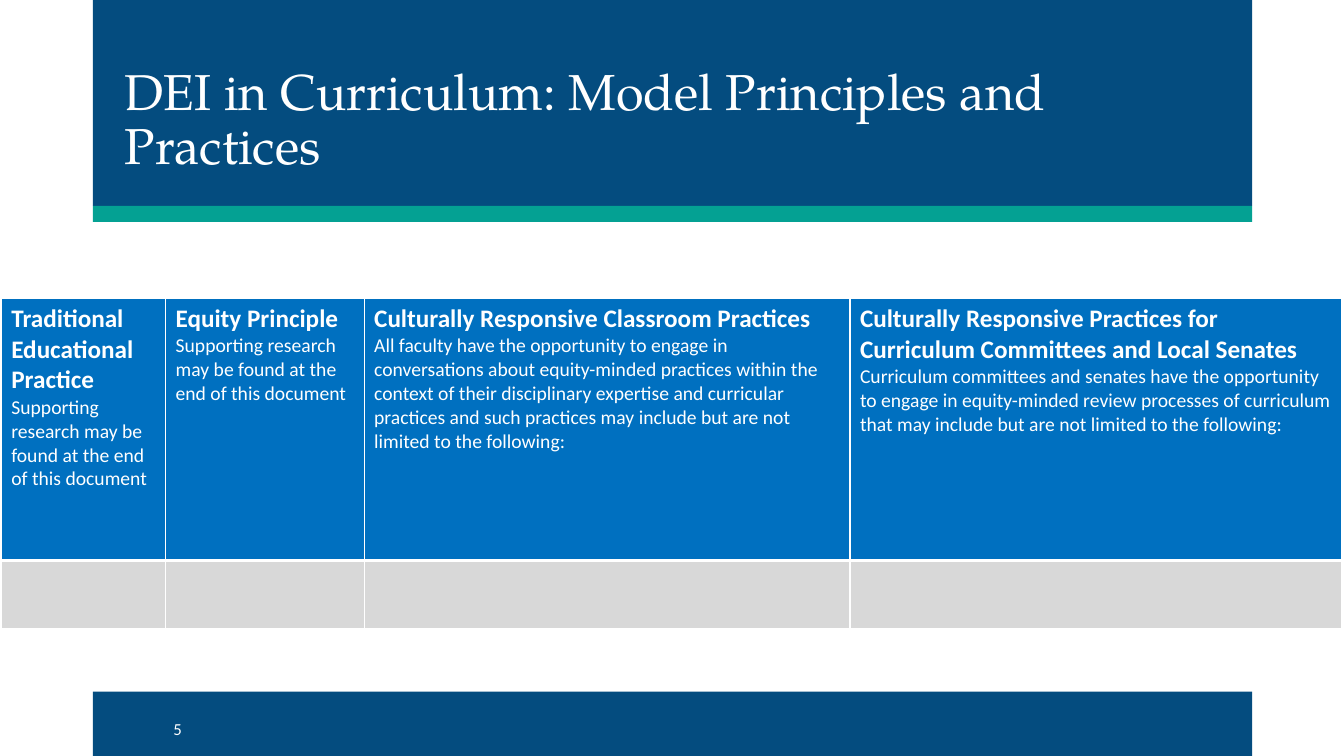
from lxml.etree import SubElement as Sub
from pptx import Presentation
from pptx.dml.color import RGBColor
from pptx.enum.shapes import MSO_SHAPE as Shape
from pptx.enum.text import MSO_ANCHOR as Anchor, MSO_AUTO_SIZE as Fit, PP_ALIGN as Align
from pptx.oxml.ns import qn
from pptx.util import Pt

NAVY = RGBColor(0x04, 0x4C, 0x7F)
TEAL = RGBColor(0x04, 0xA1, 0x93)
BLUE = RGBColor(0x00, 0x70, 0xC0)
GRAY = RGBColor(0xD8, 0xD8, 0xD8)
WHITE = RGBColor(0xFF, 0xFF, 0xFF)
SANS = "Calibri"
SERIF = "TeX Gyre Pagella"

SOURCE = "Supporting research may be found at the end of this document"
HEADS = [
    (117.36, "Traditional Educational Practice", SOURCE),
    (141.84, "Equity Principle", SOURCE),
    (347.04, "Culturally Responsive Classroom Practices",
     "All faculty have the opportunity to engage in conversations about "
     "equity-minded practices within the context of their disciplinary "
     "expertise and curricular practices and such practices may include "
     "but are not limited to the following:"),
    (351.36, "Culturally Responsive Practices for Curriculum Committees and Local Senates",
     "Curriculum committees and senates have the opportunity to engage in "
     "equity-minded review processes of curriculum that may include but "
     "are not limited to the following:"),
]
ROWS = [187.2, 48.96]


def write(para, text, size, font=SANS, bold=False, space=None):
    para.alignment = Align.LEFT
    if space:
        para.line_spacing = space
    run = para.add_run()
    run.text = text
    run.font.size = Pt(size)
    run.font.name = font
    run.font.bold = bold
    run.font.color.rgb = WHITE


def band(slide, left, top, width, height, color):
    bar = slide.shapes.add_shape(Shape.RECTANGLE, Pt(left), Pt(top), Pt(width), Pt(height))
    bar.shadow.inherit = False
    bar.fill.solid()
    bar.fill.fore_color.rgb = color
    bar.line.fill.background()


def header(slide, left, top, width, height):
    strip = 11.5
    band(slide, left, top, width, height - strip, NAVY)
    band(slide, left, top + height - strip, width, strip, TEAL)
    title = slide.shapes.title
    title.left, title.top = Pt(left + 15.6), Pt(top + 34.6)
    title.width, title.height = Pt(796.3), Pt(103.7)
    frame = title.text_frame
    frame.word_wrap = True
    frame.auto_size = Fit.NONE
    frame.vertical_anchor = Anchor.MIDDLE
    write(frame.paragraphs[0], "DEI in Curriculum: Model Principles and Practices",
          36, font=SERIF, space=0.9)
    slide.shapes._spTree.append(title._element)


def footer(slide, left, top, width, height):
    band(slide, left, top, width, height, NAVY)
    box = slide.shapes.add_textbox(Pt(left + 50.4), Pt(top + 17.3), Pt(64.8), Pt(18))
    frame = box.text_frame
    frame.word_wrap = True
    frame.vertical_anchor = Anchor.MIDDLE
    write(frame.paragraphs[0], "5", 12)


def edge(cell, **sides):
    props = cell._tc.get_or_add_tcPr()
    for side, width in sides.items():
        line = Sub(props, qn("a:ln" + side), w=str(Pt(width)))
        fill = Sub(line, qn("a:solidFill"))
        Sub(fill, qn("a:srgbClr"), val=str(WHITE))


def paint(cell, color, top, base):
    edge(cell, L=1, R=1, T=top, B=base)
    cell.fill.solid()
    cell.fill.fore_color.rgb = color
    cell.margin_left = cell.margin_right = Pt(7.2)
    cell.margin_top = cell.margin_bottom = Pt(3.6)


def grid(slide, left, top):
    width = sum(head[0] for head in HEADS)
    table = slide.shapes.add_table(len(ROWS), len(HEADS), Pt(left), Pt(top),
                                   Pt(width), Pt(sum(ROWS))).table
    for row, height in zip(table.rows, ROWS):
        row.height = Pt(height)
    for col, (wide, name, note) in enumerate(HEADS):
        table.columns[col].width = Pt(wide)
        cell = table.cell(0, col)
        paint(cell, BLUE, 1, 3)
        write(cell.text_frame.paragraphs[0], name, 18, bold=True)
        write(cell.text_frame.add_paragraph(), note, 14)
        paint(table.cell(1, col), GRAY, 3, 1)


def main():
    deck = Presentation()
    deck.slide_width, deck.slide_height = Pt(960), Pt(540)
    slide = deck.slides.add_slide(deck.slide_layouts[5])
    footer(slide, 66.4, 494, 828, 46)
    header(slide, 66.4, 0, 828, 158.6)
    grid(slide, 0.9, 213.1)
    deck.save("out.pptx")


if __name__ == "__main__":
    main()
